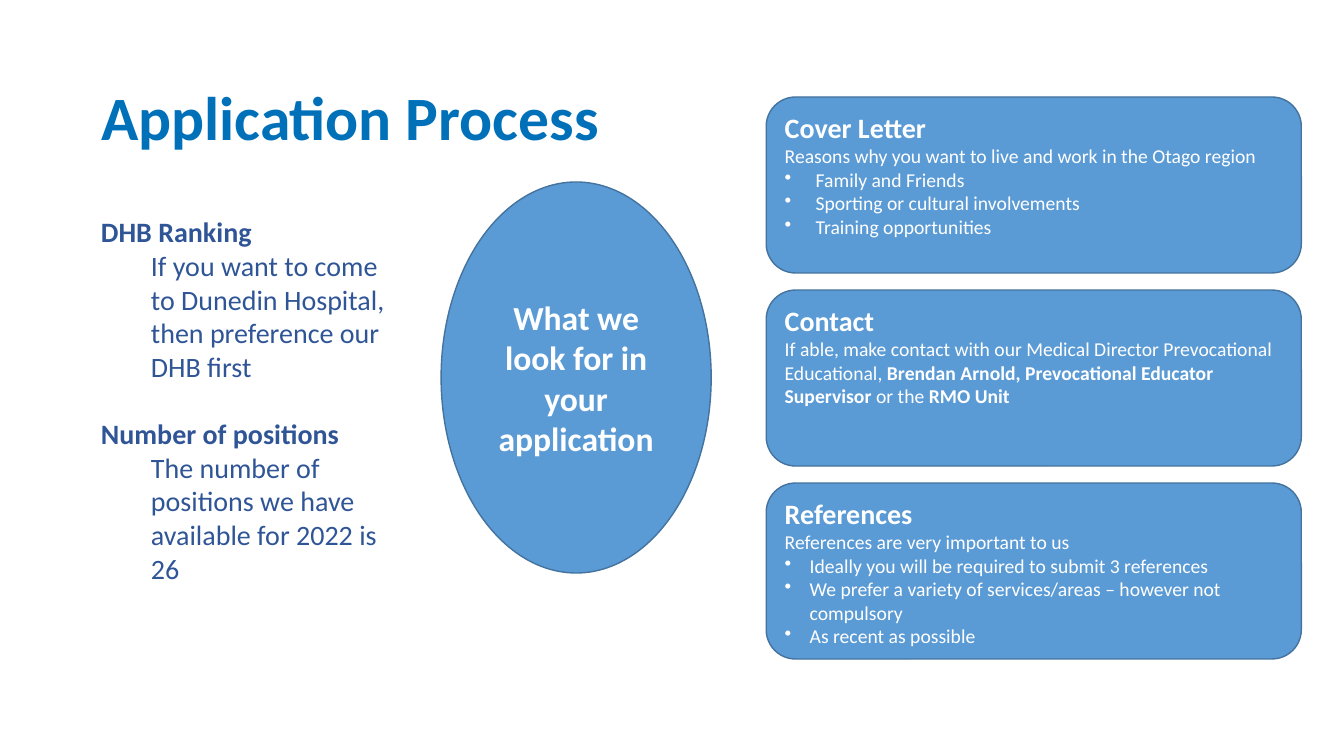
"""Build the Application Process slide with its ranking notes and criteria cards."""
import pptx
import pptx.dml.color
import pptx.enum.shapes
import pptx.enum.text
import pptx.oxml
import pptx.oxml.ns
import pptx.util

PX = 914400 / 100.8
WHITE, NAVY, TITLE_BLUE = "FFFFFF", "2F5597", "0070B9"
CARD_FILL, CARD_LINE = "5B9BD5", "43739E"
ALIGN = pptx.enum.text.PP_ALIGN
ANCHOR = pptx.enum.text.MSO_ANCHOR
SHAPE = pptx.enum.shapes.MSO_SHAPE


def paint(target, color):
    """Give a fill or font a solid colour from a hex string."""
    if hasattr(target, "solid"):
        target.solid()
        target.fore_color.rgb = pptx.dml.color.RGBColor.from_string(color)
    else:
        target.color.rgb = pptx.dml.color.RGBColor.from_string(color)


def write(box, lines, color, align=ALIGN.LEFT):
    """Write lines of (size, indent, bulleted, space before, runs) into a shape."""
    frame = box.text_frame
    frame.word_wrap = True
    for index, (size, indent, bulleted, before, runs) in enumerate(lines):
        para = frame.paragraphs[0] if index == 0 else frame.add_paragraph()
        para.alignment = align
        para.space_before = pptx.util.Pt(before)
        properties = para._p.get_or_add_pPr()
        properties.set("marL", str(round(indent * PX)))
        properties.set("indent", str(round(-indent * PX) if bulleted else 0))
        if bulleted:
            bullet = pptx.oxml.parse_xml(
                f'<a:buChar {pptx.oxml.ns.nsdecls("a")} char="•"/>')
            properties.append(bullet)
        for text, bold in runs:
            span = para.add_run()
            span.text = text
            span.font.name = "Calibri"
            span.font.size = pptx.util.Pt(size)
            span.font.bold = bold
            paint(span.font, color)


deck = pptx.Presentation()
deck.slide_width = pptx.util.Inches(13.33)
deck.slide_height = pptx.util.Inches(7.5)
page = deck.slides.add_slide(deck.slide_layouts[5])

title = page.shapes.title
title.left, title.top, title.width, title.height = [
    round(length * PX) for length in (91, 48, 1159, 146)]
title.text_frame.auto_size = pptx.enum.text.MSO_AUTO_SIZE.NONE
title.text_frame.vertical_anchor = ANCHOR.MIDDLE
write(title, [(44, 0, False, 0, [("Application Process", True)])], TITLE_BLUE)
title.text_frame.paragraphs[0].line_spacing = 0.9

cards = [
    ("Cover Letter",
     [("Reasons why you want to live and work in the Otago region", False)],
     31,
     ["Family and Friends", "Sporting or cultural involvements",
      "Training opportunities"]),
    ("Contact",
     [("If able, make contact with our Medical Director Prevocational Educational, ", False),
      ("Brendan Arnold, Prevocational Educator Supervisor ", True),
      ("or the ", False),
      ("RMO Unit", True)],
     0, []),
    ("References",
     [("References are very important to us", False)],
     25,
     ["Ideally you will be required to submit 3 references",
      "We prefer a variety of services/areas – however not compulsory",
      "As recent as possible"]),
]
panels = []
for row, (heading, intro, indent, points) in enumerate(cards):
    lines = [(20, 0, False, 0, [(heading, True)]), (14, 0, False, 0, intro)]
    lines += [(14, indent, True, 0, [(point, False)]) for point in points]
    panels.append((SHAPE.ROUNDED_RECTANGLE, (766, 97 + 193 * row, 535, 176),
                   ANCHOR.TOP, ALIGN.LEFT, lines))
panels.append((SHAPE.OVAL, (441, 182, 270, 391), ANCHOR.MIDDLE, ALIGN.CENTER,
               [(24, 0, False, 0, [("What we look for in your application", True)])]))

for kind, place, anchor, align, lines in panels:
    panel = page.shapes.add_shape(kind, *[round(length * PX) for length in place])
    panel.shadow.inherit = False
    paint(panel.fill, CARD_FILL)
    paint(panel.line.fill, CARD_LINE)
    panel.line.width = pptx.util.Pt(1)
    panel.text_frame.vertical_anchor = anchor
    write(panel, lines, WHITE, align)

notes = [
    ("DHB Ranking",
     "If you want to come to Dunedin Hospital, then preference our DHB first"),
    ("Number of positions",
     "The number of positions we have available for 2022 is 26"),
]
note_lines = []
for index, (heading, detail) in enumerate(notes):
    note_lines.append((20, 0, False, 24 * index, [(heading, True)]))
    note_lines.append((20, 50, False, 0, [(detail, False)]))
note_box = page.shapes.add_textbox(
    *[round(length * PX) for length in (91, 210, 322, 383)])
write(note_box, note_lines, NAVY)

deck.save("out.pptx")
